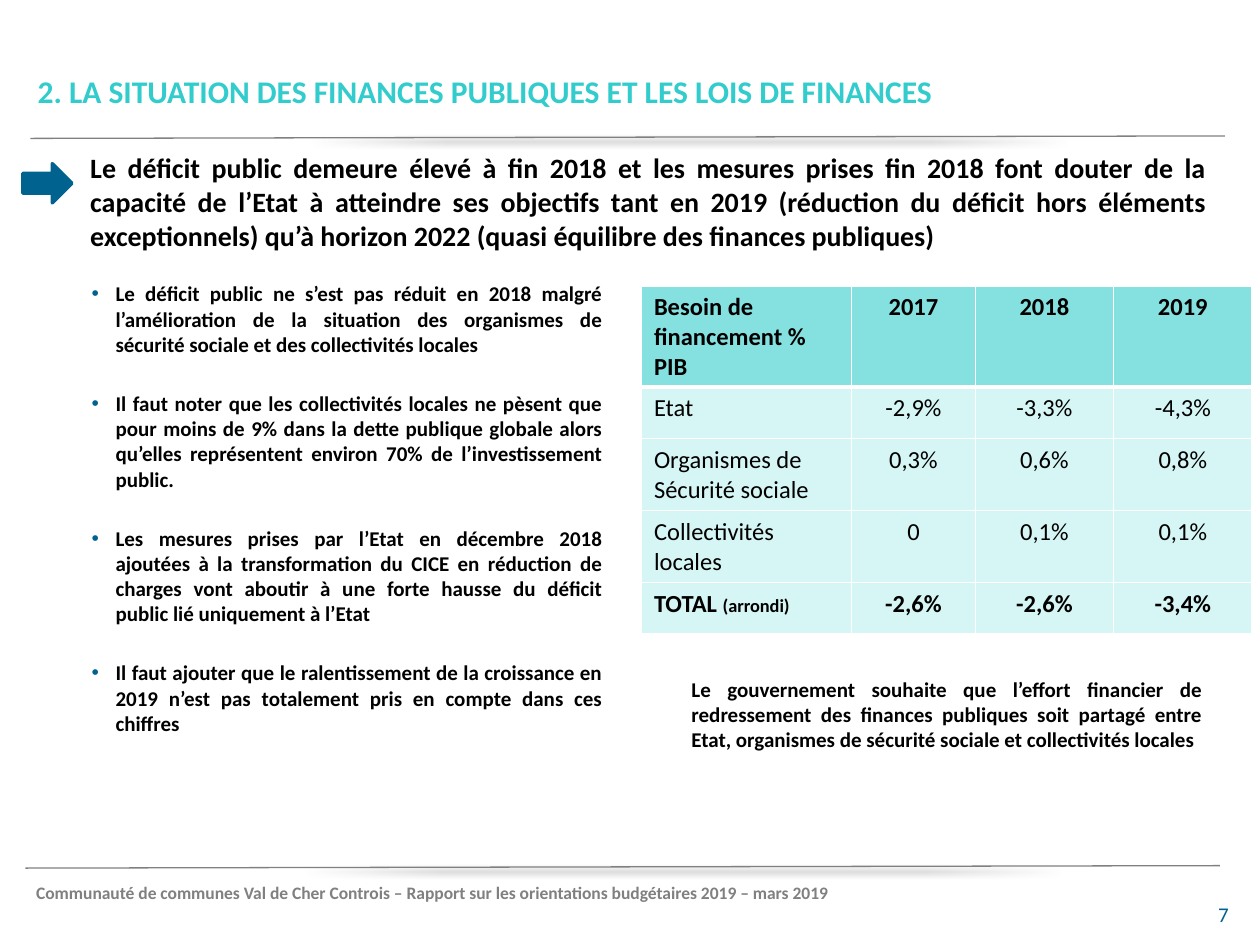
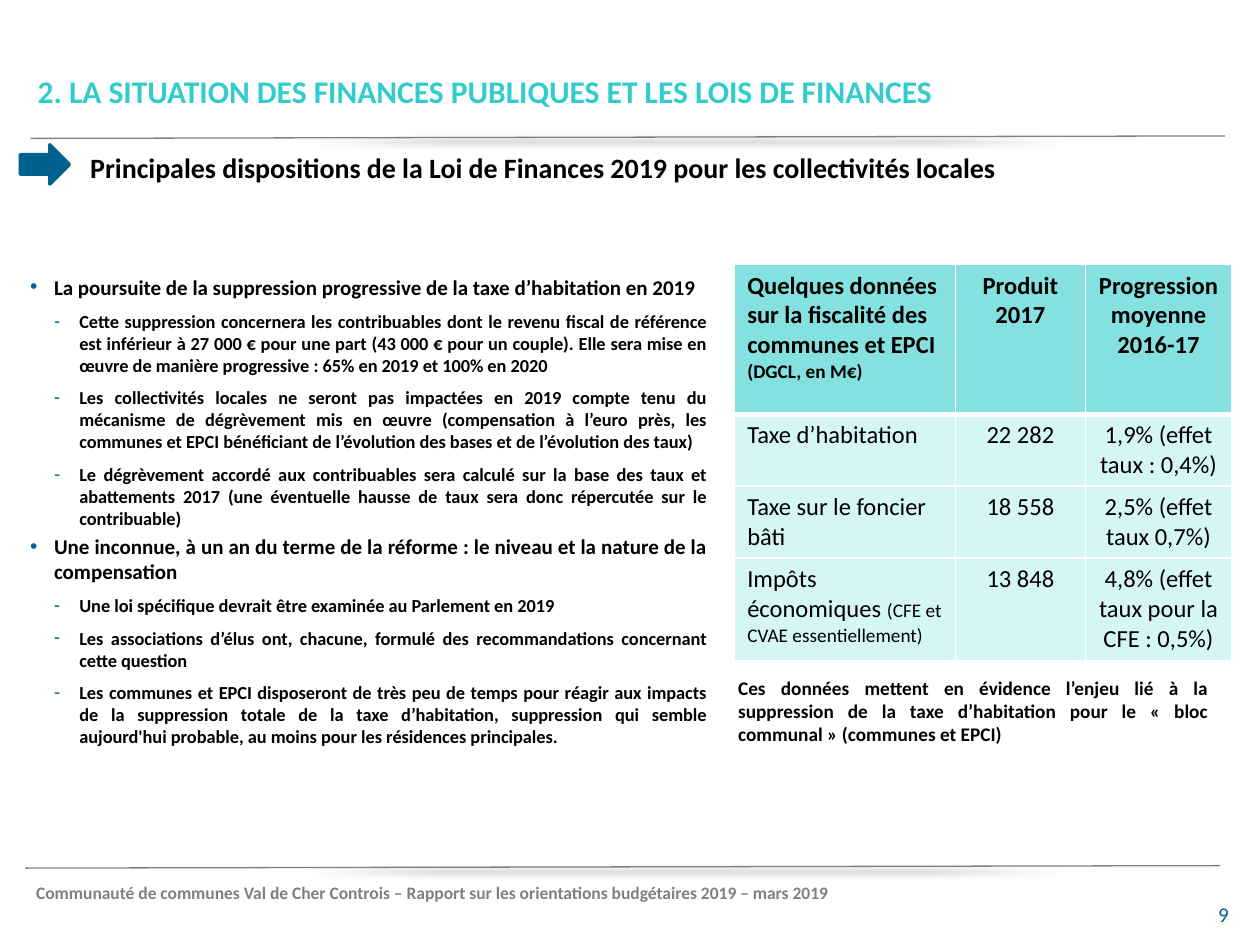
from lxml import etree
from pptx import Presentation
from pptx.dml.color import RGBColor
from pptx.enum import shapes, text
from pptx.oxml import parse_xml
from pptx.oxml.ns import nsdecls, qn
from pptx.util import Cm, Pt

FONT = "Calibri"
TURQUOISE = RGBColor(0x33, 0xCC, 0xCC)
BLUE = RGBColor(0x00, 0x63, 0x8F)
GREY = RGBColor(0x80, 0x80, 0x80)
BLACK = RGBColor(0x00, 0x00, 0x00)
WHITE = RGBColor(0xFF, 0xFF, 0xFF)
HEADER_FILL = RGBColor(0x85, 0xE0, 0xE0)
BODY_FILL = RGBColor(0xD6, 0xF5, 0xF5)

LEFT, CENTER = text.PP_ALIGN.LEFT, text.PP_ALIGN.CENTER
RIGHT, JUSTIFY = text.PP_ALIGN.RIGHT, text.PP_ALIGN.JUSTIFY

TITLE = "2. LA SITUATION DES FINANCES PUBLIQUES ET LES LOIS DE FINANCES"
FOOTER = ("Communauté de communes Val de Cher Controis – Rapport sur les "
          "orientations budgétaires 2019 – mars 2019")
RULES = [(0.61, 2.79, 24.69, 2.74), (0.51, 17.5, 24.59, 17.45)]

# Bullet levels: character, left margin and hanging indent in cm
LEVELS = [("•", 0.48, 0.48), ("-", 0.99, 0.51)]

# Points are (level, text); a table cell is a text or (text, smaller note).
PAGES = [
    {
        "number": "7",
        "heading": "Le déficit public demeure élevé à fin 2018 et les mesures prises fin 2018 "
                   "font douter de la capacité de l’Etat à atteindre ses objectifs tant en 2019 "
                   "(réduction du déficit hors éléments exceptionnels) qu’à horizon 2022 "
                   "(quasi équilibre des finances publiques)",
        "arrow": (0.46, 3.3),
        "points_box": (1.6, 5.54, 10.8, 10.31),
        "point_sizes": (12, 10.5),
        "point_gaps": (19.4, 6),
        "points": [
            (0, "Le déficit public ne s’est pas réduit en 2018 malgré l’amélioration de la "
                "situation des organismes de sécurité sociale et des collectivités locales"),
            (0, "Il faut noter que les collectivités locales ne pèsent que pour moins de 9% "
                "dans la dette publique globale alors qu’elles représentent environ 70% de "
                "l’investissement public."),
            (0, "Les mesures prises par l’Etat en décembre 2018 ajoutées à la transformation "
                "du CICE en réduction de charges vont aboutir à une forte hausse du déficit "
                "public lié uniquement à l’Etat"),
            (0, "Il faut ajouter que le ralentissement de la croissance en 2019 n’est pas "
                "totalement pris en compte dans ces chiffres"),
        ],
        "table_at": (12.93, 5.77),
        "columns": (4.24, 2.49, 2.79, 2.79),
        "rows": (2.01, 1.04, 1.45, 1.45, 1.04),
        "bold_rows": (0, 4),
        "note_size": 10.5,
        "cells": [
            ("Besoin de financement % PIB", "2017", "2018", "2019"),
            ("Etat", "-2,9%", "-3,3%", "-4,3%"),
            ("Organismes de Sécurité sociale", "0,3%", "0,6%", "0,8%"),
            ("Collectivités locales", "0", "0,1%", "0,1%"),
            (("TOTAL ", "(arrondi)"), "-2,6%", "-2,6%", "-3,4%"),
        ],
        "conclusion_box": (13.69, 13.51, 10.8, 3.05),
        "conclusion_size": 12,
        "conclusion": "Le gouvernement souhaite que l’effort financier de redressement des "
                      "finances publiques soit partagé entre Etat, organismes de sécurité "
                      "sociale et collectivités locales",
    },
    {
        "number": "9",
        "heading": "Principales dispositions de la Loi de Finances 2019 pour les "
                   "collectivités locales",
        "arrow": (0.41, 2.92),
        "points_box": (0.36, 5.4, 14.15, 8.4),
        "point_sizes": (12, 10.5),
        "point_gaps": (2.4, 6),
        "points": [
            (0, "La poursuite de la suppression progressive de la taxe d’habitation en 2019"),
            (1, "Cette suppression concernera les contribuables dont le revenu fiscal de "
                "référence est inférieur à 27 000 € pour une part (43 000 € pour un couple). "
                "Elle sera mise en œuvre de manière progressive : 65% en 2019 et 100% en 2020"),
            (1, "Les collectivités locales ne seront pas impactées en 2019 compte tenu du "
                "mécanisme de dégrèvement mis en œuvre (compensation à l’euro près, les "
                "communes et EPCI bénéficiant de l’évolution des bases et de l’évolution "
                "des taux)"),
            (1, "Le dégrèvement accordé aux contribuables sera calculé sur la base des taux "
                "et abattements 2017 (une éventuelle hausse de taux sera donc répercutée sur "
                "le contribuable)"),
            (0, "Une inconnue, à un an du terme de la réforme : le niveau et la nature de la "
                "compensation"),
            (1, "Une loi spécifique devrait être examinée au Parlement en 2019"),
            (1, "Les associations d’élus ont, chacune, formulé des recommandations "
                "concernant cette question"),
            (1, "Les communes et EPCI disposeront de très peu de temps pour réagir aux "
                "impacts de la suppression totale de la taxe d’habitation, suppression qui "
                "semble aujourd'hui probable, au moins pour les résidences principales."),
        ],
        "table_at": (14.81, 5.33),
        "columns": (4.45, 2.62, 2.95),
        "rows": (3.02, 1.45, 1.45, 2.06),
        "bold_rows": (0,),
        "note_size": 11,
        "cells": [
            (("Quelques données sur la fiscalité des communes et EPCI ", "(DGCL, en M€)"),
             "Produit 2017", "Progression moyenne 2016-17"),
            ("Taxe d’habitation", "22 282", "1,9% (effet taux : 0,4%)"),
            ("Taxe sur le foncier bâti", "18 558", "2,5% (effet taux 0,7%)"),
            (("Impôts économiques ", "(CFE et CVAE essentiellement)"),
             "13 848", "4,8% (effet taux pour la CFE : 0,5%)"),
        ],
        "conclusion_box": (14.63, 13.51, 9.98, 1.6),
        "conclusion_size": 11,
        "conclusion": "Ces données mettent en évidence l’enjeu lié à la suppression de la taxe "
                      "d’habitation pour le « bloc communal » (communes et EPCI)",
    },
]


def style_runs(paragraph, size, color=BLACK, bold=True):
    for run in paragraph.runs:
        run.font.name = FONT
        run.font.size = Pt(size)
        run.font.bold = bold
        run.font.color.rgb = color


def add_frame(slide, box):
    """Add a wrapping text box and return its text frame."""
    frame = slide.shapes.add_textbox(*map(Cm, box)).text_frame
    frame.word_wrap = True
    return frame


def add_text(slide, box, content, size, color=BLACK, bold=True, align=LEFT):
    frame = add_frame(slide, box)
    frame.text = content
    paragraph = frame.paragraphs[0]
    paragraph.alignment = align
    style_runs(paragraph, size, color, bold)
    return frame


def add_rule(slide, ends):
    """Draw a thin grey line with a soft shadow."""
    line = slide.shapes.add_connector(shapes.MSO_CONNECTOR.STRAIGHT, *map(Cm, ends))
    line.line.color.rgb = GREY
    line.line.width = Pt(0.75)
    line._element.spPr.append(parse_xml(
        f'<a:effectLst {nsdecls("a")}>'
        f'<a:outerShdw blurRad="{Pt(4)}" dist="{Pt(3)}" dir="2700000" rotWithShape="0">'
        '<a:srgbClr val="000000"><a:alpha val="40000"/></a:srgbClr>'
        '</a:outerShdw></a:effectLst>'))


def add_arrow(slide, position):
    arrow = slide.shapes.add_shape(
        shapes.MSO_SHAPE.RIGHT_ARROW, *map(Cm, (*position, 0.99, 0.79)))
    arrow.shadow.inherit = False
    arrow.fill.solid()
    arrow.fill.fore_color.rgb = BLUE
    arrow.line.color.rgb = BLUE
    arrow.line.width = Pt(2)


def set_bullet(paragraph, level):
    character, margin, hanging = LEVELS[level]
    properties = paragraph._p.get_or_add_pPr()
    properties.set("marL", str(Cm(margin)))
    properties.set("indent", str(-Cm(hanging)))
    color = etree.SubElement(properties, qn("a:buClr"))
    etree.SubElement(color, qn("a:srgbClr"), val=str(BLUE))
    etree.SubElement(properties, qn("a:buFont"), typeface="Arial")
    etree.SubElement(properties, qn("a:buChar"), char=character)


def add_points(slide, page):
    frame = add_frame(slide, page["points_box"])
    for index, (level, content) in enumerate(page["points"]):
        paragraph = frame.add_paragraph() if index else frame.paragraphs[0]
        paragraph.text = content
        paragraph.level = level
        set_bullet(paragraph, level)
        paragraph.alignment = JUSTIFY
        paragraph.space_before = Pt(page["point_gaps"][level] if index else 0)
        style_runs(paragraph, page["point_sizes"][level])


def set_borders(cell, top, bottom):
    properties = cell._tc.get_or_add_tcPr()
    for side, width in (("L", 1), ("R", 1), ("T", top), ("B", bottom)):
        border = etree.SubElement(properties, qn(f"a:ln{side}"), w=str(Pt(width)))
        fill = etree.SubElement(border, qn("a:solidFill"))
        etree.SubElement(fill, qn("a:srgbClr"), val=str(WHITE))


def fill_cell(cell, content, row, column, page):
    main, note = content if isinstance(content, tuple) else (content, "")
    bold = row in page["bold_rows"]
    cell.text_frame.text = main
    paragraph = cell.text_frame.paragraphs[0]
    paragraph.alignment = CENTER if column else LEFT
    if note:
        paragraph.add_run().text = note
    style_runs(paragraph, 14, bold=bold)
    if note:
        paragraph.runs[-1].font.size = Pt(page["note_size"])
    set_borders(cell, top=3 if row == 1 else 1, bottom=1 if row else 3)
    cell.fill.solid()
    cell.fill.fore_color.rgb = BODY_FILL if row else HEADER_FILL


def add_figures(slide, page):
    widths, heights = page["columns"], page["rows"]
    size = (sum(widths), sum(heights))
    table = slide.shapes.add_table(
        len(heights), len(widths), *map(Cm, page["table_at"] + size)).table
    table.horz_banding = False
    for column, width in zip(table.columns, widths):
        column.width = Cm(width)
    for row, height in zip(table.rows, heights):
        row.height = Cm(height)
    for row, contents in enumerate(page["cells"]):
        for column, content in enumerate(contents):
            fill_cell(table.cell(row, column), content, row, column, page)


def add_common_parts(slide, number):
    for ends in RULES:
        add_rule(slide, ends)
    add_text(slide, (0.48, 17.65, 22.4, 0.69), FOOTER, 10, GREY)
    frame = add_text(slide, (19.1, 17.91, 5.92, 1.02), number, 12, BLUE, False, RIGHT)
    frame.vertical_anchor = text.MSO_ANCHOR.MIDDLE
    add_text(slide, (0.51, 1.32, 18.8, 1.6), TITLE, 18, TURQUOISE)


def main():
    presentation = Presentation()
    presentation.slide_width, presentation.slide_height = Cm(25.4), Cm(19.05)
    for page in PAGES:
        slide = presentation.slides.add_slide(presentation.slide_layouts[6])
        add_common_parts(slide, page["number"])
        add_text(slide, (1.57, 2.92, 23.01, 14.99), page["heading"], 16, align=JUSTIFY)
        add_arrow(slide, page["arrow"])
        add_figures(slide, page)
        add_points(slide, page)
        add_text(slide, page["conclusion_box"], page["conclusion"],
                 page["conclusion_size"], align=JUSTIFY)
    presentation.save("out.pptx")


if __name__ == "__main__":
    main()
